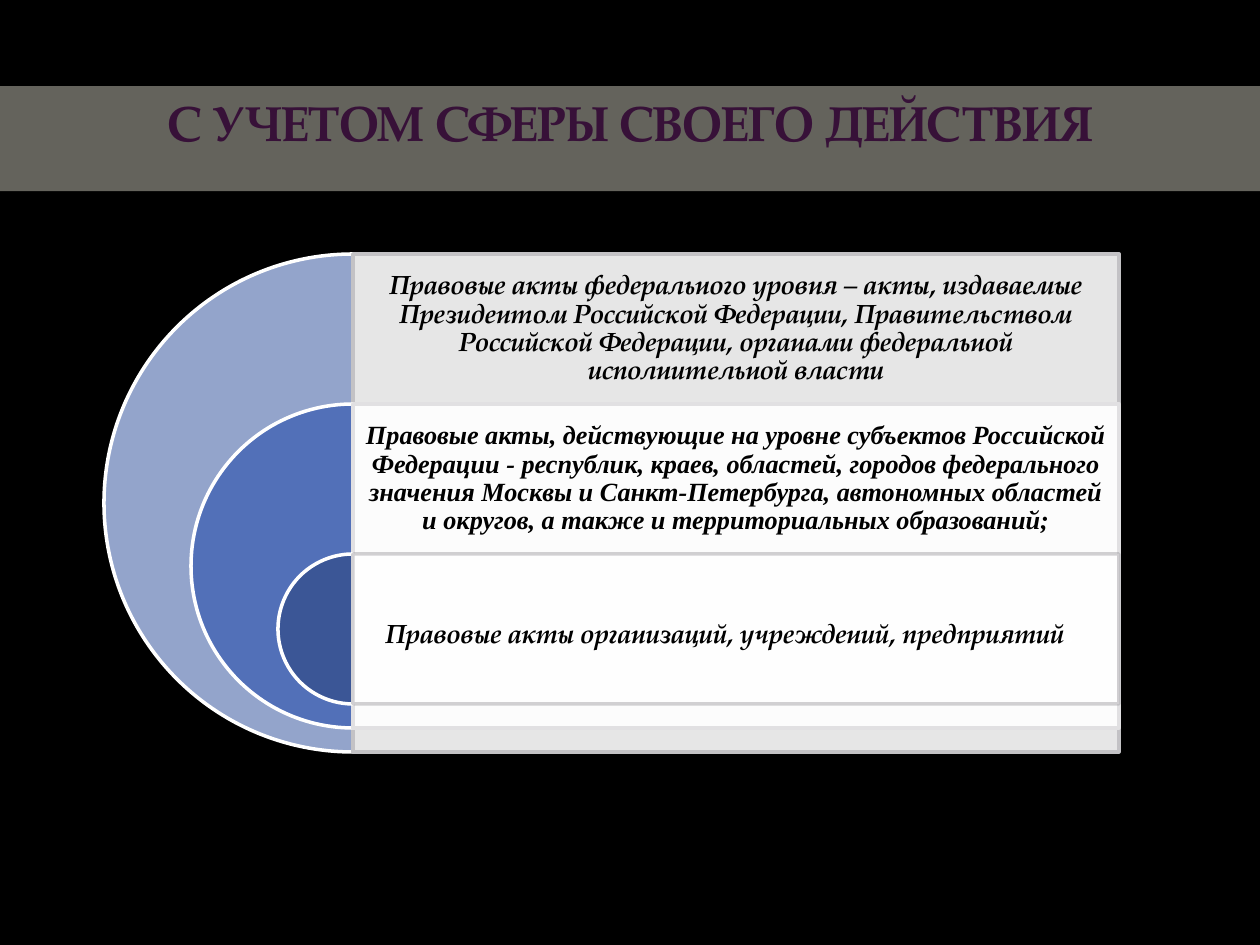
import pptx
import pptx.dml.color
import pptx.enum.shapes
import pptx.enum.text
import pptx.oxml.ns
import pptx.util
from lxml import etree

RGB = pptx.dml.color.RGBColor
SHAPE = pptx.enum.shapes.MSO_SHAPE
ANCHOR = pptx.enum.text.MSO_ANCHOR
ALIGN = pptx.enum.text.PP_ALIGN
PX = pptx.util.Inches(1) / 126

BLACK = RGB(0x00, 0x00, 0x00)
WHITE = RGB(0xFF, 0xFF, 0xFF)
CREAM = RGB(0xF5, 0xF1, 0xE0)
PLUM = RGB(0x37, 0x11, 0x38)
LIGHT_BLUE = RGB(0xA3, 0xB6, 0xE2)
MID_BLUE = RGB(0x37, 0x5B, 0xB0)
DARK_BLUE = RGB(0x25, 0x3D, 0x75)
SILVER = RGB(0xC3, 0xC2, 0xC5)
PALE_GREY = RGB(0xE1, 0xE0, 0xE2)
GREY = RGB(0xA5, 0xA3, 0xA8)

PAGELLA = "TeX Gyre Pagella"
TIMES = "Times New Roman"


class SlideBuilder:
    """Keeps the text style and the slide being built."""

    body = {"size": pptx.util.Pt(15), "bold": True, "italic": True}
    inset = 8

    def __init__(self, slide):
        self.slide = slide

    def box(self, *lengths):
        return [round(length * PX) for length in lengths]

    def paint(self, fill, color, opacity=100):
        fill.solid()
        fill.fore_color.rgb = color
        if opacity < 100:
            tint = fill._xPr.find(".//" + pptx.oxml.ns.qn("a:srgbClr"))
            etree.SubElement(tint, pptx.oxml.ns.qn("a:alpha"), val=str(opacity * 1000))

    def add_text(self, paragraph, text, color, **style):
        run = paragraph.add_run()
        run.text = text
        for name, value in style.items():
            setattr(run.font, name, value)
        run.font.color.rgb = color

    def title(self, text, *place):
        heading = self.slide.shapes.title
        heading.left, heading.top, heading.width, heading.height = self.box(*place)
        self.paint(heading.fill, CREAM, 41)
        frame = heading.text_frame
        frame_format = {"word_wrap": True, "vertical_anchor": ANCHOR.TOP,
                        "auto_size": pptx.enum.text.MSO_AUTO_SIZE.SHAPE_TO_FIT_TEXT}
        for name, value in frame_format.items():
            setattr(frame, name, value)
        frame.paragraphs[0].alignment = ALIGN.CENTER
        self.add_text(frame.paragraphs[0], text, PLUM,
                      name=PAGELLA, size=pptx.util.Pt(28), bold=True)

    def shape(self, kind, place, fill, line, fill_opacity, line_opacity=100):
        shape = self.slide.shapes.add_shape(kind, *self.box(*place))
        shape.shadow.inherit = False
        self.paint(shape.fill, fill, fill_opacity)
        self.paint(shape.line.fill, line, line_opacity)
        shape.line.width = pptx.util.Pt(2)
        return shape

    def half_disc(self, place, color, opacity):
        disc = self.shape(SHAPE.PIE, place, color, WHITE, opacity)
        # Quarter turn to three-quarter turn: the left half
        disc.adjustments[0], disc.adjustments[1] = 54, 162

    def label(self, place, text, font):
        frame = self.slide.shapes.add_textbox(*self.box(*place)).text_frame
        frame.word_wrap = True
        frame.vertical_anchor = ANCHOR.MIDDLE
        for side in ("left", "top", "right", "bottom"):
            setattr(frame, "margin_" + side, round(self.inset * PX))
        paragraph = frame.paragraphs[0]
        paragraph.alignment = ALIGN.CENTER
        paragraph.line_spacing = 0.9
        self.add_text(paragraph, text, BLACK, name=font, **self.body)
        return paragraph


def main():
    deck = pptx.Presentation()
    deck.slide_width, deck.slide_height = round(1260 * PX), round(945 * PX)
    slide = deck.slides.add_slide(deck.slide_layouts[5])
    builder = SlideBuilder(slide)
    builder.paint(slide.background.fill, BLACK)

    # Title band
    builder.title("С УЧЕТОМ СФЕРЫ СВОЕГО ДЕЙСТВИЯ", 0, 86, 1260, 72)

    # Nested levels, from the widest scope to the narrowest
    levels = [
        (LIGHT_BLUE, 90, SILVER, 100, PAGELLA,
         "Правовые акты федерального уровня – акты, издаваемые Президентом "
         "Российской Федерации, Правительством Российской Федерации, "
         "органами федеральной исполнительной власти"),
        (MID_BLUE, 70, PALE_GREY, 100, TIMES,
         "Правовые акты, действующие на уровне субъектов Российской Федерации - "
         "республик, краев, областей, городов федерального значения Москвы и "
         "Санкт-Петербурга, автономных областей и округов, а также и "
         "территориальных образований;"),
        (DARK_BLUE, 50, GREY, 50, PAGELLA,
         "Правовые акты организаций, учреждений, предприятий"),
    ]
    axis, first_top, row, width = 353, 254, 150, 766
    outer, shrink = 498, 174
    for index, (color, opacity, border, border_opacity, font, text) in enumerate(levels):
        top = first_top + index * row
        size = outer - index * shrink
        builder.half_disc((axis - size // 2, top, size, size), color, opacity)
        builder.shape(SHAPE.RECTANGLE, (axis, top, width, size), WHITE, border,
                      90, border_opacity)
        paragraph = builder.label((axis, top, width, row), text, font)

    # Large white full stop closing the last level
    closing = {**builder.body, "size": pptx.util.Pt(25)}
    builder.add_text(paragraph, ". ", WHITE, name=PAGELLA, **closing)

    deck.save("out.pptx")


if __name__ == "__main__":
    main()
